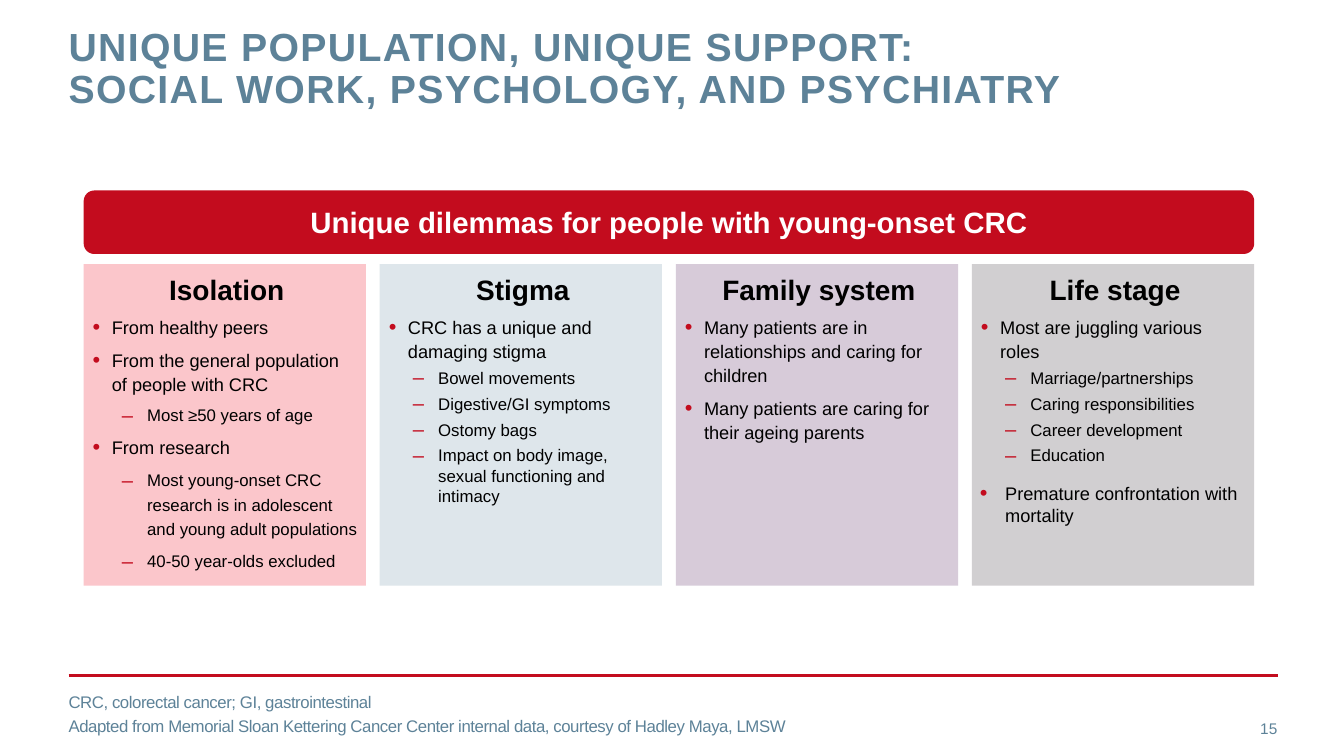
from lxml.etree import SubElement
from pptx import Presentation
from pptx.dml.color import RGBColor
from pptx.enum.shapes import MSO_CONNECTOR, MSO_SHAPE
from pptx.enum.text import MSO_ANCHOR, PP_ALIGN
from pptx.oxml.ns import qn
from pptx.util import Pt

PX = 9144  # 100 px to the inch
FONT = "Arial"
COLORS = {
    "slate": "5D8298", "red": "C30C1E", "black": "000000", "white": "FFFFFF",
    "pink": "FBC6CB", "ice": "DEE6EB", "mauve": "D7CBD9", "gray": "D1CFD1",
}

# Bullet levels: mark, left and hanging indent in px, spacing and size in points
LEVELS = {
    "point": dict(bullet=("•", 20, -19), lines=1.1, before=6, size=13),
    "late point": dict(bullet=("•", 25, -25), before=12, size=13),
    "detail": dict(bullet=("–", 50, -25), before=4, size=12),
    "deep detail": dict(bullet=("–", 55, -25), lines=1.1, before=6, size=12),
    "loose detail": dict(bullet=("–", 55, -25), lines=1.2, before=6, size=12),
}

DILEMMAS = [
    ("Isolation", "pink", [
        ("point", "From healthy peers"),
        ("point", "From the general population\nof people with CRC"),
        ("deep detail", "Most ≥50 years of age"),
        ("point", "From research"),
        ("loose detail", "Most young-onset CRC research is in adolescent "
                         "and young adult populations"),
        ("loose detail", "40-50 year-olds excluded"),
    ]),
    ("Stigma", "ice", [
        ("point", "CRC has a unique and damaging stigma"),
        ("detail", "Bowel movements"),
        ("detail", "Digestive/GI symptoms"),
        ("detail", "Ostomy bags"),
        ("detail", "Impact on body image, sexual functioning and intimacy"),
    ]),
    ("Family system", "mauve", [
        ("point", "Many patients are in relationships and caring for children"),
        ("point", "Many patients are caring for their ageing parents"),
    ]),
    ("Life stage", "gray", [
        ("point", "Most are juggling various\nroles"),
        ("detail", "Marriage/partnerships"),
        ("detail", "Caring responsibilities"),
        ("detail", "Career development"),
        ("detail", "Education"),
        ("late point", "Premature confrontation with mortality"),
    ]),
]


def emu(*lengths):
    return [round(length * PX) for length in lengths]


def rgb(name):
    return RGBColor.from_string(COLORS[name])


def set_bullet(para, mark, left, hanging):
    props = para._p.get_or_add_pPr()
    props.set("marL", str(left * PX))
    props.set("indent", str(hanging * PX))
    color = SubElement(props, qn("a:buClr"))
    SubElement(color, qn("a:srgbClr"), val=COLORS["red"])
    SubElement(props, qn("a:buSzPct"), val="120000")
    SubElement(props, qn("a:buFont"), typeface=FONT)
    SubElement(props, qn("a:buChar"), char=mark)


def write(frame, text, *, size, color="black", bold=False, align=PP_ALIGN.LEFT,
          before=0, lines=None, tracking=None, bullet=None):
    """Add one formatted paragraph, using the empty first one if there is one."""
    first = frame.paragraphs[0]
    para = frame.add_paragraph() if first.runs else first
    if bullet:
        set_bullet(para, *bullet)
    para.text = text
    para.alignment = align
    para.space_before = Pt(before)
    if lines:
        para.line_spacing = lines
    for line_break in para._p.findall(qn("a:br")):
        SubElement(line_break, qn("a:rPr"), sz=str(size * 100))
    for span in para.runs:
        span.font.name = FONT
        span.font.size = Pt(size)
        span.font.bold = bold
        span.font.color.rgb = rgb(color)
        if tracking:
            span.font._element.set("spc", str(tracking))


def set_frame(shape, margins=(0, 0, 0, 0), anchor=MSO_ANCHOR.TOP):
    frame = shape.text_frame
    frame.word_wrap = True
    frame.vertical_anchor = anchor
    (frame.margin_left, frame.margin_top,
     frame.margin_right, frame.margin_bottom) = emu(*margins)
    return frame


def add_panel(page, kind, box, fill):
    panel = page.shapes.add_shape(kind, *emu(*box))
    panel.shadow.inherit = False
    panel.fill.solid()
    panel.fill.fore_color.rgb = rgb(fill)
    panel.line.fill.background()
    return panel


def add_title(page, box):
    frame = set_frame(page.shapes.add_textbox(*emu(*box)))
    write(frame, "UNIQUE POPULATION, UNIQUE SUPPORT:\n"
                 "SOCIAL WORK, PSYCHOLOGY, AND PSYCHIATRY",
          size=28, color="slate", bold=True, lines=Pt(30), tracking=100)


def add_column(page, box, heading, fill, items):
    panel = add_panel(page, MSO_SHAPE.RECTANGLE, box, fill)
    frame = set_frame(panel, margins=(8, 8, 4, 4))
    write(frame, heading, size=20, bold=True, align=PP_ALIGN.CENTER)
    for level, text in items:
        write(frame, text, **LEVELS[level])


def add_dilemmas(page, box):
    left, top, width, height = box
    # Banner across all columns
    banner = add_panel(page, MSO_SHAPE.ROUNDED_RECTANGLE, (left, top, width, 63), "red")
    frame = set_frame(banner, margins=(10, 5, 10, 5), anchor=MSO_ANCHOR.MIDDLE)
    write(frame, "Unique dilemmas for people with young-onset CRC",
          size=21, color="white", bold=True, align=PP_ALIGN.CENTER)
    # Columns, evenly spread below the banner
    column_width, drop = 280, 73
    step = (width - column_width) / (len(DILEMMAS) - 1)
    for index, dilemma in enumerate(DILEMMAS):
        column = (left + index * step, top + drop, column_width, height - drop)
        add_column(page, column, *dilemma)


def add_footer(page, box):
    left, top, width, height = box
    # Rule
    rule = page.shapes.add_connector(MSO_CONNECTOR.STRAIGHT,
                                     *emu(left, top, left + width, top))
    rule.line.color.rgb = rgb("red")
    rule.line.width = Pt(2)
    SubElement(rule._element.spPr, qn("a:effectLst"))
    # Notes on abbreviations and source
    notes = page.shapes.add_textbox(*emu(left, top + 18, 1113, 40))
    frame = set_frame(notes, anchor=MSO_ANCHOR.MIDDLE)
    style = dict(size=12, color="slate", tracking=-30)
    write(frame, "CRC, colorectal cancer; GI, gastrointestinal", **style)
    write(frame, "Adapted from Memorial Sloan Kettering Cancer Center internal data, "
                 "courtesy of Hadley Maya, LMSW", before=3, **style)
    # Page number
    number = page.shapes.add_textbox(*emu(left + width - 87, top + 33, 86, height - 33))
    frame = set_frame(number, anchor=MSO_ANCHOR.MIDDLE)
    write(frame, "15", size=11, color="slate", align=PP_ALIGN.RIGHT)


def main():
    deck = Presentation()
    deck.slide_width, deck.slide_height = emu(1333, 750)
    page = deck.slides.add_slide(deck.slide_layouts[6])
    add_title(page, (68, 27, 999, 88))
    add_dilemmas(page, (83, 189, 1161, 392))
    add_footer(page, (68, 670, 1200, 73))
    deck.save("out.pptx")


if __name__ == "__main__":
    main()
